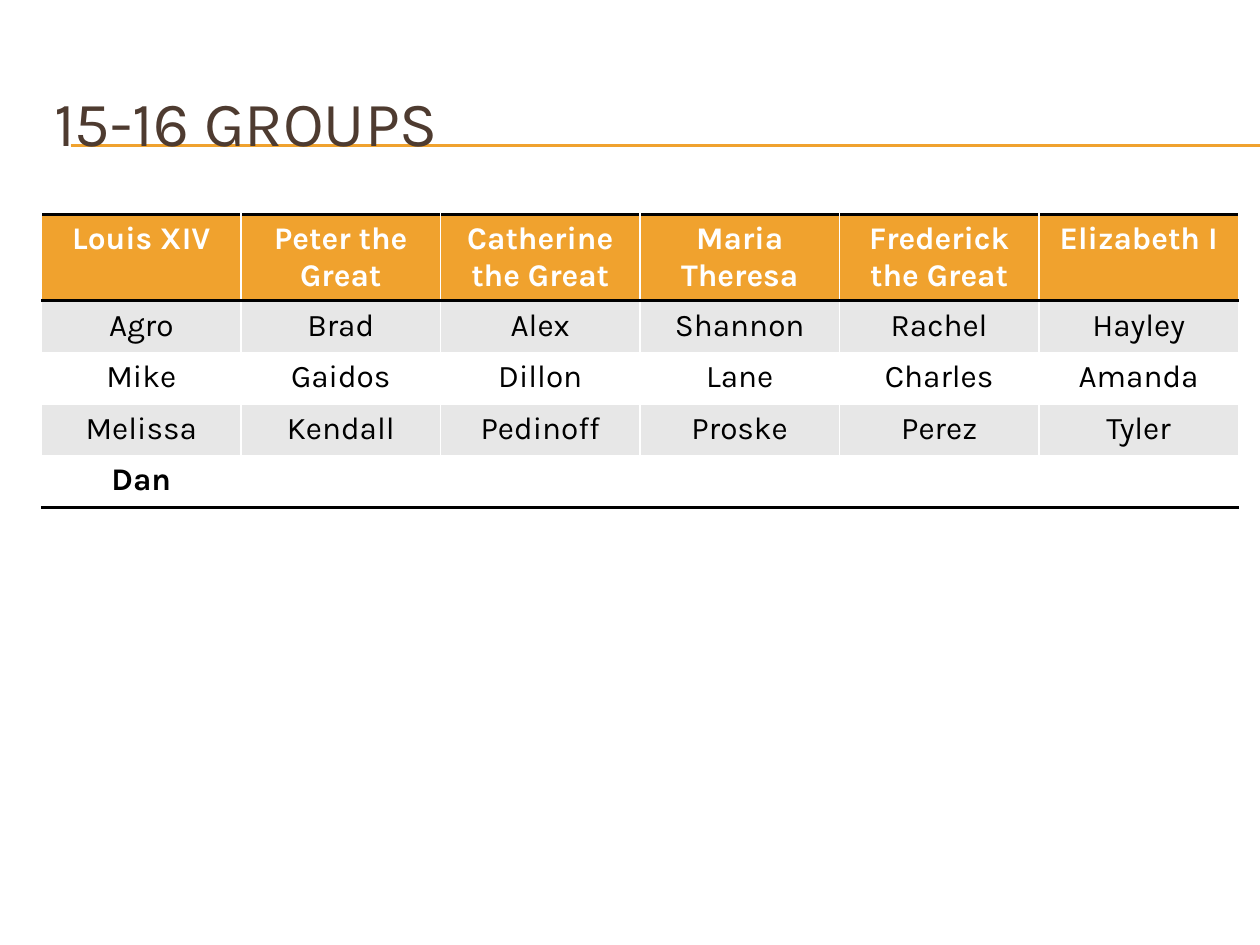
import pptx
import pptx.util
import pptx.dml.color
import pptx.enum.shapes
import pptx.enum.text
import pptx.oxml
import pptx.oxml.ns

Inches, Pt = pptx.util.Inches, pptx.util.Pt
COLORS = {"gold": "F0A22E", "brown": "4E3B30", "band": "E7E7E7",
          "white": "FFFFFF", "black": "000000"}
FONT = "Karla"
GROUPS = [
    ["Louis XIV", "Peter the Great", "Catherine the Great",
     "Maria Theresa", "Frederick the Great", "Elizabeth I"],
    ["Agro", "Brad", "Alex", "Shannon", "Rachel", "Hayley"],
    ["Mike", "Gaidos", "Dillon", "Lane", "Charles", "Amanda"],
    ["Melissa", "Kendall", "Pedinoff", "Proske", "Perez", "Tyler"],
    ["Dan", "", "", "", "", ""],
]


def color(name):
    return pptx.dml.color.RGBColor.from_string(COLORS[name])


def add_borders(cell, sides):
    """Rule the given sides (T, B) of a cell in black; lines precede the fill."""
    properties = cell._tc.get_or_add_tcPr()
    for position, side in enumerate(sides):
        properties.insert(position, pptx.oxml.parse_xml(
            f'<a:ln{side} {pptx.oxml.ns.nsdecls("a")} w="{Pt(2)}"><a:solidFill>'
            f'<a:srgbClr val="{COLORS["black"]}"/></a:solidFill></a:ln{side}>'))


deck = pptx.Presentation()
deck.slide_width, deck.slide_height = Inches(10), Inches(7.5)
page = deck.slides.add_slide(deck.slide_layouts[5])
left, width = Inches(0.33), Inches(9.5)

# Double rule running off the right edge, behind the title
for height in (1.15, 1.16):
    rule = page.shapes.add_connector(
        pptx.enum.shapes.MSO_CONNECTOR.STRAIGHT,
        Inches(0.56), Inches(height), deck.slide_width, Inches(height))
    rule.line.color.rgb = color("gold")
    rule.line.width = Pt(0.75)
    rule._element.spPr.append(pptx.oxml.parse_xml(
        f'<a:effectLst {pptx.oxml.ns.nsdecls("a")}/>'))

title = page.shapes.title
title.element.getparent().append(title.element)
title.left, title.top, title.width, title.height = left, Inches(0.5), width, Inches(0.92)
title.text_frame.text = "15-16 GROUPS"
title.text_frame.vertical_anchor = pptx.enum.text.MSO_ANCHOR.MIDDLE
para = title.text_frame.paragraphs[0]
para.alignment = pptx.enum.text.PP_ALIGN.LEFT
font = para.runs[0].font
font.name, font.size, font.color.rgb = FONT, Pt(36), color("brown")

row_height = Inches(0.41)
table = page.shapes.add_table(len(GROUPS), len(GROUPS[0]), left, Inches(1.7),
                              width, row_height * len(GROUPS)).table
last = len(GROUPS) - 1
for row, names in enumerate(GROUPS):
    table.rows[row].height = row_height
    header = row == 0
    fill = "gold" if header else "band" if row % 2 else "white"
    sides = "TB" if header else "B" if row == last else ""
    for column, name in enumerate(names):
        cell = table.cell(row, column)
        cell.fill.solid()
        cell.fill.fore_color.rgb = color(fill)
        add_borders(cell, sides)
        para = cell.text_frame.paragraphs[0]
        para.text = name
        para.alignment = pptx.enum.text.PP_ALIGN.CENTER
        para.font.size = Pt(18)
        for span in para.runs:
            span.font.name, span.font.size = FONT, Pt(18)
            span.font.bold = header or row == last
            span.font.color.rgb = color("white" if header else "black")

deck.save("out.pptx")
